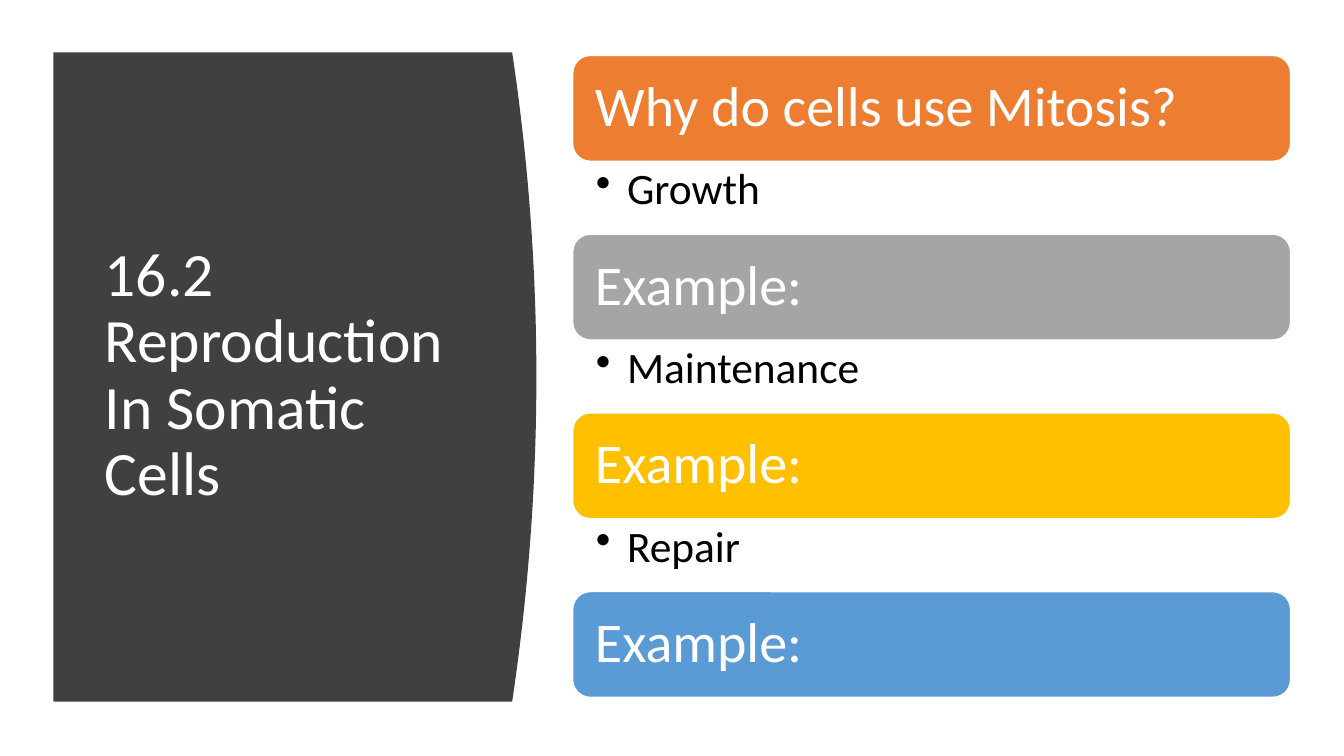
"""Build the slide on reproduction in somatic cells."""
from lxml.etree import SubElement
from pptx import Presentation
from pptx.dml.color import RGBColor
from pptx.enum.shapes import MSO_SHAPE as Preset
from pptx.enum.text import MSO_ANCHOR as Anchor, PP_ALIGN as Align
from pptx.oxml.ns import qn
from pptx.util import Inches, Pt

COLORS = {
    "panel": "404040", "white": "FFFFFF", "black": "000000",
    "orange": "ED7D31", "gray": "A5A5A5", "gold": "FFC000", "blue": "5B9BD5",
}
SECTIONS = [
    ("Why do cells use Mitosis?", "orange", "Growth"),
    ("Example:", "gray", "Maintenance"),
    ("Example:", "gold", "Repair"),
    ("Example:", "blue", None),
]
LIST_LEFT, LIST_TOP, LIST_WIDTH = 5.68, 0.55, 7.12
BAR_HEIGHT, BULLET_HEIGHT = 1.05, 0.72
PITCH = 1.773
PANEL_LEFT, PANEL_TOP, PANEL_EDGE, PANEL_HEIGHT = 0.53, 0.52, 5.08, 6.44
BULGE, CURVE_STEPS = 0.24, 40


def color(name):
    return RGBColor.from_string(COLORS[name])


def write_text(shape, text, size, color_name, anchor, insets):
    frame = shape.text_frame
    frame.word_wrap = True
    frame.vertical_anchor = anchor
    frame.margin_left, frame.margin_top, frame.margin_right, frame.margin_bottom = map(Inches, insets)
    paragraph = frame.paragraphs[0]
    paragraph.text = text
    paragraph.alignment = Align.LEFT
    paragraph.line_spacing = 0.9
    paragraph.font.name = "Calibri"
    paragraph.font.size = Pt(size)
    paragraph.font.color.rgb = color(color_name)
    return paragraph


presentation = Presentation()
presentation.slide_width = Inches(13.33)
presentation.slide_height = Inches(7.5)
slide = presentation.slides.add_slide(presentation.slide_layouts[6])
shapes = slide.shapes

curve = []
for step in range(CURVE_STEPS + 1):
    share = step / CURVE_STEPS
    x = PANEL_EDGE + BULGE * 4 * share * (1 - share)
    curve.append((Inches(x), Inches(PANEL_TOP + PANEL_HEIGHT * share)))
builder = shapes.build_freeform(Inches(PANEL_LEFT), Inches(PANEL_TOP))
builder.add_line_segments(curve + [(Inches(PANEL_LEFT), Inches(PANEL_TOP + PANEL_HEIGHT))], close=True)
panel = builder.convert_to_shape()
panel.shadow.inherit = False
panel.fill.solid()
panel.fill.fore_color.rgb = color("panel")
panel.line.fill.background()

title = shapes.add_textbox(Inches(0.94), Inches(1.11), Inches(3.74), Inches(5.24))
write_text(title, "16.2 Reproduction In Somatic Cells", 44, "white", Anchor.MIDDLE, (0.1, 0.05, 0.1, 0.05))

for index, (heading, fill_name, bullet) in enumerate(SECTIONS):
    top = LIST_TOP + index * PITCH
    bar = shapes.add_shape(
        Preset.ROUNDED_RECTANGLE, Inches(LIST_LEFT), Inches(top), Inches(LIST_WIDTH), Inches(BAR_HEIGHT))
    bar.shadow.inherit = False
    bar.fill.solid()
    bar.fill.fore_color.rgb = color(fill_name)
    bar.line.color.rgb = color("white")
    bar.line.width = Pt(1)
    write_text(bar, heading, 40, "white", Anchor.MIDDLE, (0.17, 0.17, 0.17, 0.17))
    if bullet:
        box = shapes.add_textbox(
            Inches(LIST_LEFT), Inches(top + BAR_HEIGHT), Inches(LIST_WIDTH), Inches(BULLET_HEIGHT))
        paragraph = write_text(box, bullet, 31, "black", Anchor.TOP, (0.23, 0.06, 0.31, 0.06))
        properties = paragraph._p.get_or_add_pPr()
        properties.set("marL", str(Inches(0.31)))
        properties.set("indent", str(-Inches(0.31)))
        properties.insert_element_before(
            SubElement(properties, qn("a:buChar"), char="•"), "a:tabLst", "a:defRPr", "a:extLst")

presentation.save("out.pptx")
